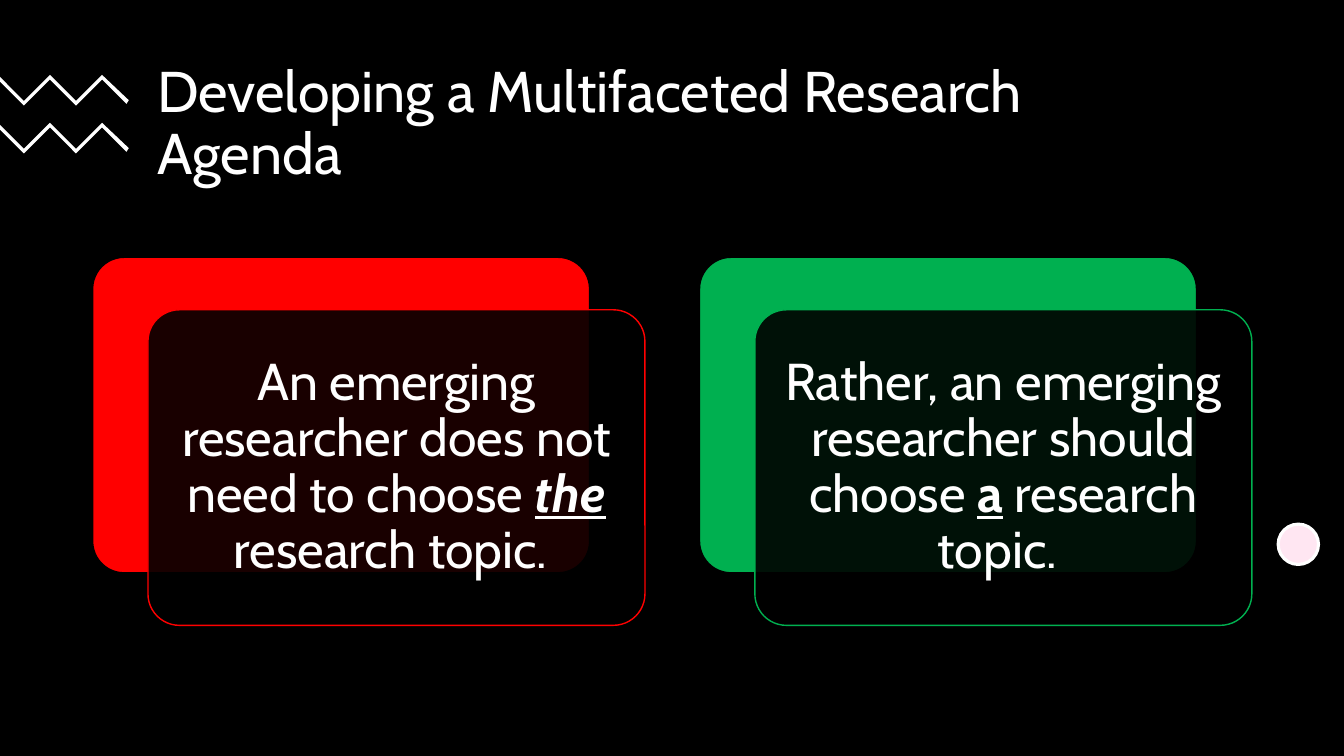
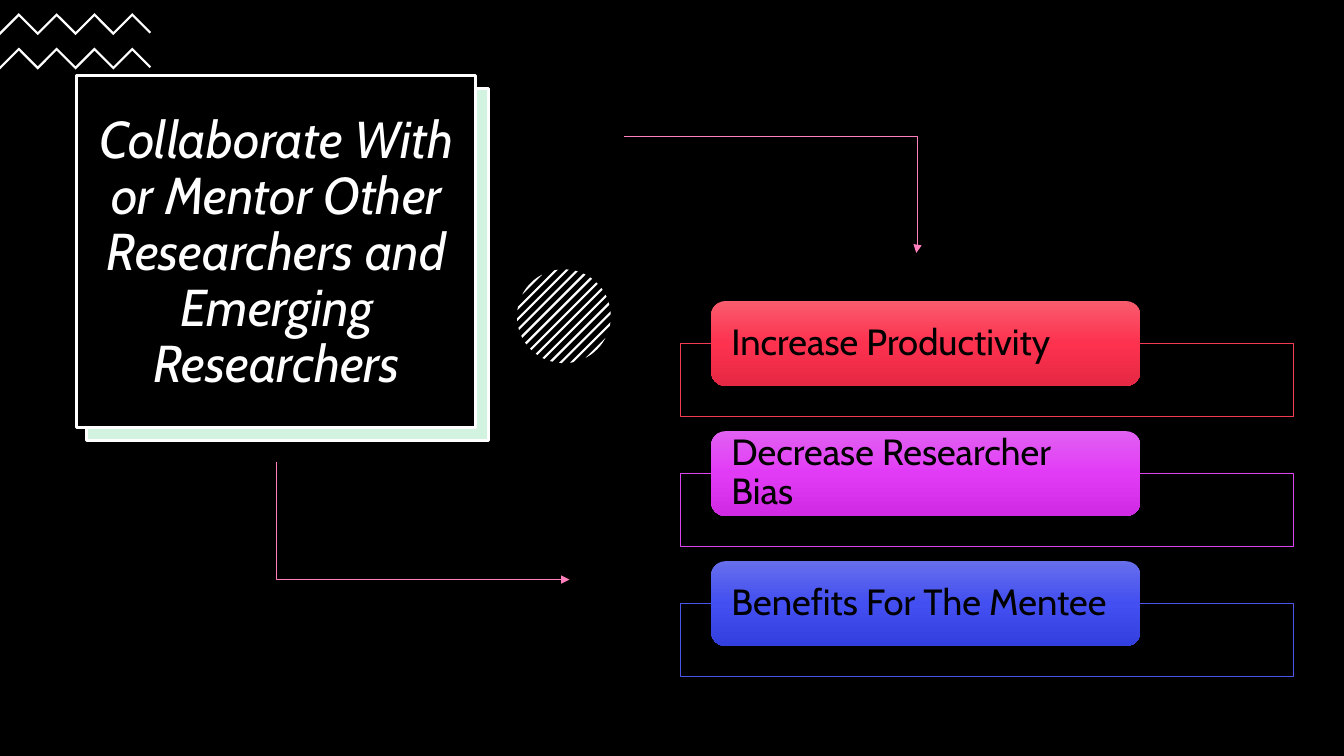
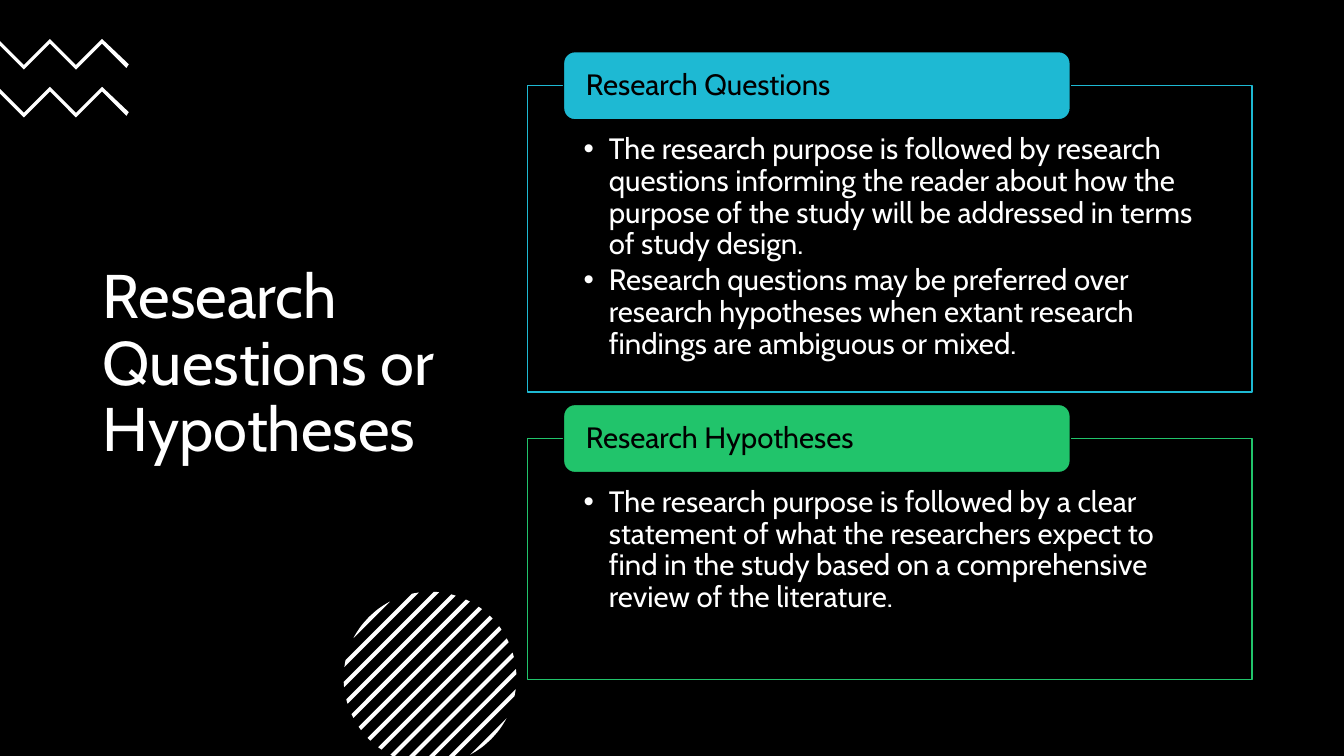
import copy
import math
from dataclasses import dataclass
from typing import Any, NamedTuple, Optional

import lxml.etree
import pptx
import pptx.dml.color
import pptx.enum.shapes
import pptx.enum.text
import pptx.oxml.ns
import pptx.util

Pt = pptx.util.Pt
qn = pptx.oxml.ns.qn
SHAPE = pptx.enum.shapes.MSO_SHAPE
ALIGN = pptx.enum.text.PP_ALIGN
ANCHOR = pptx.enum.text.MSO_ANCHOR

FONT = "Cabin"
BLACK, WHITE, PINK = "000000", "FFFFFF", "FF80BD"
PALE_PINK, PALE_GREEN = "FFE6F2", "D3F3E1"
SLIDE_WIDTH, SLIDE_HEIGHT = 960, 540
STRIPE_PITCH, STRIPE_HALF = 0.163, 0.0235


class Box(NamedTuple):
    left: float
    top: float
    width: float
    height: float

    def moved(self, right: float, down: float) -> "Box":
        return Box(self.left + right, self.top + down, self.width, self.height)


class Run(NamedTuple):
    text: str
    bold: bool = False
    italic: bool = False
    underline: bool = False


@dataclass(frozen=True)
class TextStyle:
    size: float
    color: str = WHITE
    align: Any = ALIGN.LEFT
    anchor: Any = ANCHOR.MIDDLE
    margins: tuple[float, float, float, float] = (7.2, 3.6, 7.2, 3.6)
    space_after: float = 0
    hanging: float = 0


@dataclass(frozen=True)
class Zigzag:
    first_peak: float
    period: float
    end: float
    thickness: float


@dataclass(frozen=True)
class Card:
    color: str
    runs: tuple[Run, ...]


@dataclass(frozen=True)
class Benefit:
    label: str
    outline: str
    gradient: tuple[str, str, str]


@dataclass(frozen=True)
class Topic:
    heading: str
    color: str
    top: float
    height: float
    points: tuple[str, ...]


WIDE_ZIGZAG = Zigzag(-1.5, 37.2, 92, 3.3)
SMALL_ZIGZAG = Zigzag(13.5, 27, 108, 2.2)

CARD_TEXT = TextStyle(37, align=ALIGN.CENTER, margins=(10.8,) * 4)
BENEFIT_TEXT = TextStyle(26, BLACK, margins=(11.5, 0, 11.5, 0))
HEADING_TEXT = TextStyle(21, BLACK, margins=(13.7, 0, 13.7, 0))
POINT_TEXT = TextStyle(21, anchor=ANCHOR.TOP, margins=(40.3, 34.6, 40.3, 11.5),
                       space_after=3, hanging=18)

CARDS = (
    Card("FF0000", (Run("An emerging researcher does not need to choose "),
                    Run("the", True, True, True), Run(" research topic. "))),
    Card("00B050", (Run("Rather, an emerging researcher should choose "),
                    Run("a", bold=True, underline=True), Run(" research topic. "))),
)
BENEFITS = (
    Benefit("Increase Productivity", "F43B56", ("F85C6E", "FD324F", "E52844")),
    Benefit("Decrease Researcher Bias", "DB43EE", ("E161F2", "E23BF6", "D12AE5")),
    Benefit("Benefits For The Mentee", "4B56E8", ("666EEC", "434FF0", "333FDE")),
)
TOPICS = (
    Topic("Research Questions", "1EB9D3", 61.2, 218.9, (
        "The research purpose is followed by research questions informing the reader "
        "about how the purpose of the study will be addressed in terms of study design.",
        "Research questions may be preferred over research hypotheses when extant "
        "research findings are ambiguous or mixed.")),
    Topic("Research Hypotheses", "21C46B", 313.2, 172.1, (
        "The research purpose is followed by a clear statement of what the researchers "
        "expect to find in the study based on a comprehensive review of the literature.",)),
)


def rgb(color: str) -> pptx.dml.color.RGBColor:
    return pptx.dml.color.RGBColor.from_string(color)


def paint(shape: Any, fill: str, line: Optional[str] = None,
          weight: float = 1, opacity: int = 100) -> None:
    shape.shadow.inherit = False
    shape.fill.solid()
    shape.fill.fore_color.rgb = rgb(fill)
    if opacity < 100:
        solid = shape._element.spPr.find(qn("a:solidFill"))
        lxml.etree.SubElement(solid[0], qn("a:alpha"), val=str(opacity * 1000))
    if line is None:
        shape.line.fill.background()
    else:
        shape.line.color.rgb = rgb(line)
        shape.line.width = Pt(weight)


def paint_gradient(shape: Any, colors: tuple[str, str, str]) -> None:
    shape.shadow.inherit = False
    shape.line.fill.background()
    shape.fill.gradient()
    stops = shape._element.spPr.find(".//" + qn("a:gsLst"))
    stops.insert(1, copy.deepcopy(stops[0]))
    for stop, position, color in zip(shape.fill.gradient_stops, (0, 0.5, 1), colors):
        stop.position = position
        stop.color.rgb = rgb(color)
    shape.fill.gradient_angle = 270


def place(shape: Any, box: Box) -> None:
    shape.left, shape.top, shape.width, shape.height = (Pt(length) for length in box)


def add_shape(slide: Any, kind: Any, box: Box, corner: Optional[float] = None) -> Any:
    shape = slide.shapes.add_shape(kind, *(Pt(length) for length in box))
    if corner is not None:
        shape.adjustments[0] = corner
    return shape


def write(shape: Any, style: TextStyle, *paragraphs: tuple[Run, ...]) -> None:
    frame = shape.text_frame
    frame.word_wrap = True
    frame.auto_size = pptx.enum.text.MSO_AUTO_SIZE.NONE
    frame.vertical_anchor = style.anchor
    (frame.margin_left, frame.margin_top,
     frame.margin_right, frame.margin_bottom) = (Pt(margin) for margin in style.margins)
    for index, runs in enumerate(paragraphs):
        paragraph = frame.add_paragraph() if index else frame.paragraphs[0]
        if style.hanging:
            properties = paragraph._p.get_or_add_pPr()
            properties.set("marL", str(Pt(style.hanging)))
            properties.set("indent", str(-Pt(style.hanging)))
        paragraph.alignment = style.align
        paragraph.line_spacing = 0.9
        paragraph.space_before = Pt(0)
        paragraph.space_after = Pt(style.space_after)
        paragraph.font.name = FONT
        paragraph.font.size = Pt(style.size)
        paragraph.font.color.rgb = rgb(style.color)
        for part in runs:
            run = paragraph.add_run()
            run.text = part.text
            for emphasis in ("bold", "italic", "underline"):
                if getattr(part, emphasis):
                    setattr(run.font, emphasis, True)


def set_title(slide: Any, box: Box, style: TextStyle, title: Run) -> None:
    heading = slide.shapes.title
    slide.shapes._spTree.append(heading._element)
    place(heading, box)
    write(heading, style, (title,))


def add_outline(shapes: Any, points: list[tuple[float, float]]) -> None:
    corners = [(Pt(x), Pt(y)) for x, y in points]
    builder = shapes.build_freeform(*corners[0])
    builder.add_line_segments(corners[1:], close=True)
    paint(builder.convert_to_shape(), WHITE)


def add_zigzag(slide: Any, zigzag: Zigzag, top: float) -> None:
    half = zigzag.period / 2

    def edge(x: float) -> float:
        return top + half - abs((x - zigzag.first_peak) % zigzag.period - half)

    first_turn = zigzag.first_peak % half
    turns = [first_turn + half * step for step in range(math.ceil(zigzag.end / half))]
    turns = [x for x in turns if 0 < x < zigzag.end - 1]
    upper = [0, *turns, zigzag.end]
    lower = [zigzag.end - zigzag.thickness / 2, *reversed(turns), 0]
    add_outline(slide.shapes, [(x, edge(x)) for x in upper]
                + [(x, edge(x) + zigzag.thickness) for x in lower])


def add_zigzags(slide: Any, zigzag: Zigzag, top: float, gap: float) -> None:
    for row in range(2):
        add_zigzag(slide, zigzag, top + row * gap)


def add_striped_circle(slide: Any, center_x: float, center_y: float, radius: float) -> None:
    root = math.sqrt(2)
    stripes = slide.shapes.add_group_shape().shapes
    for stripe in range(-6, 7):
        start = max(-1, stripe * STRIPE_PITCH - STRIPE_HALF) * radius
        stop = min(1, stripe * STRIPE_PITCH + STRIPE_HALF) * radius
        upper, lower = [], []
        for step in range(9):
            across = start + (stop - start) * step / 8
            reach = math.sqrt(max(0, radius ** 2 - across ** 2))
            floor = (SLIDE_HEIGHT - center_y) * root - across
            for side, along in ((upper, -reach), (lower, min(reach, floor))):
                side.append((center_x + (across - along) / root,
                             center_y + (across + along) / root))
        add_outline(stripes, upper + lower[::-1])


def add_elbow_arrow(slide: Any, start: tuple[float, float],
                    end: tuple[float, float], bend: int) -> None:
    arrow = slide.shapes.add_connector(
        pptx.enum.shapes.MSO_CONNECTOR.ELBOW, *(Pt(length) for length in start + end))
    arrow.line.color.rgb = rgb(PINK)
    arrow.line.width = Pt(0.5)
    properties = arrow._element.spPr
    guides = properties.find(qn("a:prstGeom")).find(qn("a:avLst"))
    lxml.etree.SubElement(guides, qn("a:gd"), name="adj1", fmla=f"val {bend}")
    lxml.etree.SubElement(properties.find(qn("a:ln")), qn("a:tailEnd"), type="triangle")
    lxml.etree.SubElement(properties, qn("a:effectLst"))


def build_agenda(slide: Any) -> None:
    set_title(slide, Box(105.1, 44.6, 767.5, 88.6), TextStyle(41),
              Run("Developing a Multifaceted Research Agenda"))
    add_zigzags(slide, WIDE_ZIGZAG, 53.5, 34.2)
    dot = add_shape(slide, SHAPE.OVAL, Box(913, 374.4, 28.8, 28.8))
    paint(dot, PALE_PINK, WHITE, 2.25)
    for column, card in enumerate(CARDS):
        back = Box(66.2, 183.8, 355, 225.4).moved(column * 433.5, 0)
        paint(add_shape(slide, SHAPE.ROUNDED_RECTANGLE, back, 0.1), card.color, BLACK)
        front = add_shape(slide, SHAPE.ROUNDED_RECTANGLE, back.moved(39.5, 37.5), 0.1)
        paint(front, BLACK, card.color, opacity=90)
        write(front, CARD_TEXT, card.runs)


def build_collaboration(slide: Any) -> None:
    backing = add_shape(slide, SHAPE.RECTANGLE, Box(61.9, 63.4, 287.3, 251.3))
    paint(backing, PALE_GREEN, WHITE, 2.25)
    frame = add_shape(slide, SHAPE.RECTANGLE, Box(54.7, 54, 285.1, 251.3))
    paint(frame, BLACK, WHITE, 2.25)
    set_title(slide, Box(58.3, 67.7, 278.6, 226.8), TextStyle(37, align=ALIGN.CENTER),
              Run("Collaborate With or Mentor Other Researchers and Emerging Researchers",
                  italic=True))
    add_zigzags(slide, SMALL_ZIGZAG, 9.4, 24.6)
    add_striped_circle(slide, 402.8, 225.9, 33.5)
    for row, benefit in enumerate(BENEFITS):
        down = row * 92.9
        panel = add_shape(slide, SHAPE.RECTANGLE, Box(486, 245.4, 437.8, 51.8).moved(0, down))
        paint(panel, BLACK, benefit.outline, 0.5, 90)
        tab = add_shape(slide, SHAPE.ROUNDED_RECTANGLE,
                        Box(508, 215.1, 306.5, 60.5).moved(0, down))
        paint_gradient(tab, benefit.gradient)
        write(tab, BENEFIT_TEXT, (Run(benefit.label),))
    add_elbow_arrow(slide, (198, 330.5), (406.8, 414), -400)
    add_elbow_arrow(slide, (445.7, 97.2), (654.5, 180.7), 100400)


def build_questions(slide: Any) -> None:
    add_striped_circle(slide, 307.2, 484.4, 61.7)
    set_title(slide, Box(66.2, 94.3, 252, 333.4), TextStyle(44),
              Run("Research Questions or Hypotheses"))
    add_zigzags(slide, WIDE_ZIGZAG, 27.8, 34.2)
    for index, topic in enumerate(TOPICS, start=1):
        panel = slide.placeholders[index]
        place(panel, Box(376.6, topic.top, 517.7, topic.height))
        paint(panel, BLACK, topic.color, opacity=90)
        write(panel, POINT_TEXT, *((Run(point),) for point in topic.points))
        tab = add_shape(slide, SHAPE.ROUNDED_RECTANGLE,
                        Box(402.5, topic.top - 24.3, 362, 48.7))
        paint(tab, topic.color, BLACK)
        write(tab, HEADING_TEXT, (Run(topic.heading),))


def main() -> None:
    deck = pptx.Presentation()
    deck.slide_width, deck.slide_height = Pt(SLIDE_WIDTH), Pt(SLIDE_HEIGHT)
    backdrop = deck.slide_master.background.fill
    backdrop.solid()
    backdrop.fore_color.rgb = rgb(BLACK)
    for layout, build in (("Title Only", build_agenda),
                          ("Title Only", build_collaboration),
                          ("Two Content", build_questions)):
        build(deck.slides.add_slide(deck.slide_layouts.get_by_name(layout)))
    deck.save("out.pptx")


if __name__ == "__main__":
    main()
